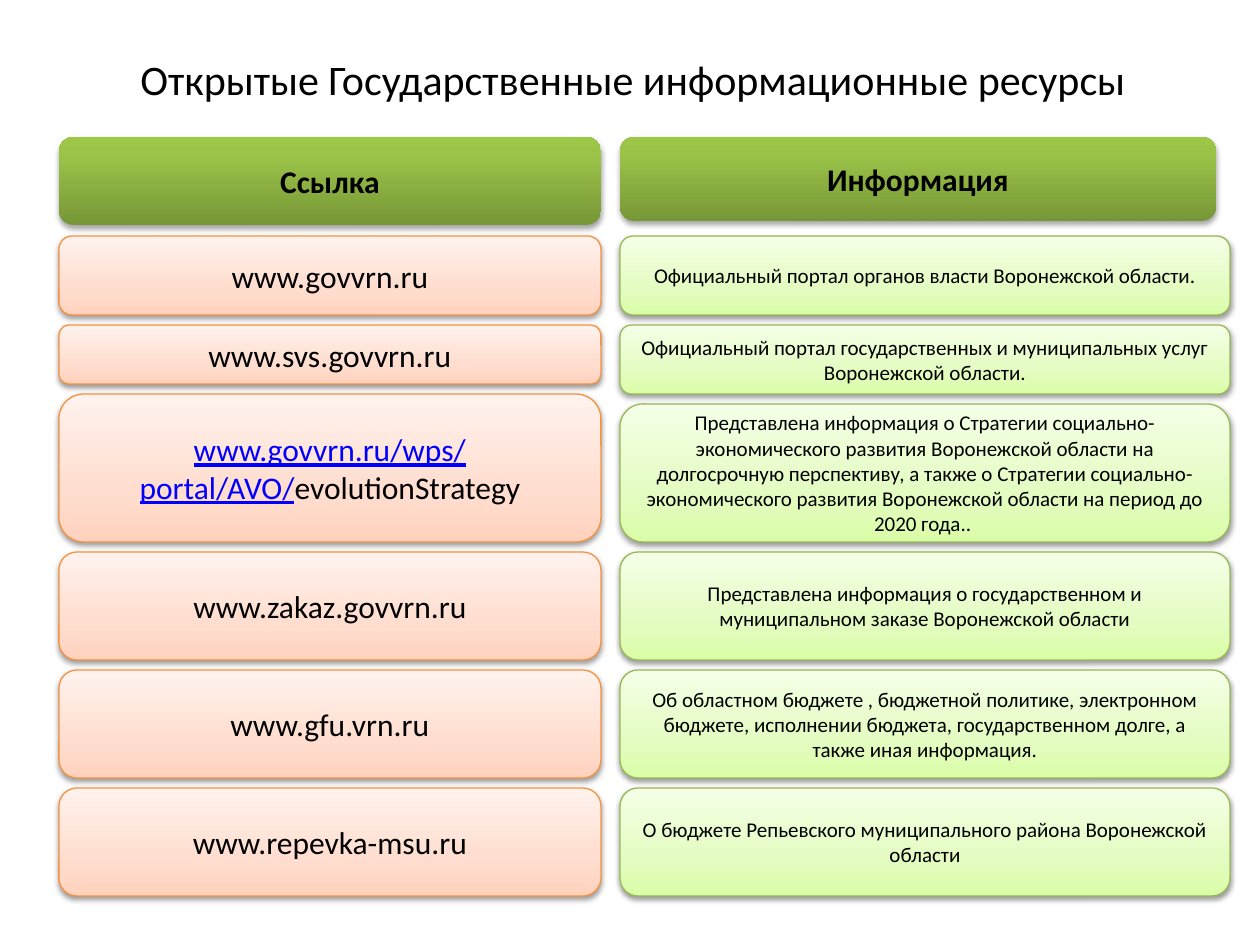
from lxml import etree
from pptx import Presentation
from pptx.dml.color import RGBColor
from pptx.enum.shapes import MSO_SHAPE
from pptx.enum.text import MSO_ANCHOR, PP_ALIGN
from pptx.oxml.ns import qn
from pptx.util import Emu, Pt

ROUNDED = MSO_SHAPE.ROUNDED_RECTANGLE
MIDDLE = MSO_ANCHOR.MIDDLE
CENTER = PP_ALIGN.CENTER

EMU_PER_PX = 914400 / 126
EMU_PER_PT = 12700
BLACK = "000000"
LINK_BLUE = "0000FF"

HEADER = {"stops": [(0, "779737"), (80, "9BC348"), (100, "9DC746")],
          "border": None, "size": 18, "bold": True, "shadow": (35, 1.8)}
LINK = {"stops": [(0, "FFD2BD"), (35, "FFDED0"), (100, "FFF2ED")],
        "border": "F69240", "size": 18, "bold": False, "shadow": (38, 1.6)}
INFO = {"stops": [(0, "DAFDA7"), (35, "E4FCC2"), (100, "F5FFE7")],
        "border": "98B955", "size": 12, "bold": False, "shadow": (38, 1.6)}

LINK_X, LINK_W = 59, 542
INFO_X, INFO_W = 620, 610
HEADER_Y = 137
GAP = 10

ROWS = [
    (79, 79, "www.govvrn.ru",
     "Официальный портал органов власти Воронежской области."),
    (59, 69, "www.svs.govvrn.ru",
     "Официальный портал государственных и муниципальных услуг Воронежской области."),
    (148, 138, "www.govvrn.ru/wps/\nportal/AVO/evolutionStrategy",
     "Представлена информация о Стратегии социально-экономического развития "
     "Воронежской области на долгосрочную перспективу, а также о Стратегии "
     "социально-экономического развития Воронежской области на период до 2020 года.. "),
    (108, 108, "www.zakaz.govvrn.ru",
     "Представлена информация о государственном и муниципальном заказе Воронежской области"),
    (108, 108, "www.gfu.vrn.ru",
     "Об областном бюджете , бюджетной политике, электронном бюджете, исполнении "
     "бюджета, государственном долге, а также иная информация."),
    (108, 108, "www.repevka-msu.ru",
     "О бюджете Репьевского муниципального района Воронежской области"),
]


def px(length):
    return Emu(round(length * EMU_PER_PX))


def color(value):
    return RGBColor.from_string(value)


def add_color(parent, value):
    node = etree.SubElement(parent, qn("a:srgbClr"))
    node.set("val", value)
    return node


class ResourceSlide:
    font_name = "Calibri"

    def __init__(self, slide):
        self.slide = slide

    def style_run(self, run, size, bold=False, ink=BLACK, underline=False):
        run.font.name = self.font_name
        run.font.size = Pt(size)
        run.font.bold = bold
        run.font.underline = underline
        run.font.color.rgb = color(ink)

    def set_text(self, frame, text, size, bold=False):
        frame.word_wrap = True
        frame.vertical_anchor = MIDDLE
        frame.text = text
        for paragraph in frame.paragraphs:
            paragraph.alignment = CENTER
            for run in paragraph.runs:
                self.style_run(run, size, bold)

    def title(self, x, y, width, height, text):
        heading = self.slide.shapes.add_textbox(px(x), px(y), px(width), px(height))
        self.set_text(heading.text_frame, text, 24)

    def gradient(self, card, stops):
        card.fill.gradient()
        card.fill.gradient_angle = 90
        stop_list = card._element.spPr.find(qn("a:gradFill")).find(qn("a:gsLst"))
        for old_stop in list(stop_list):
            stop_list.remove(old_stop)
        for position, value in stops:
            stop = etree.SubElement(stop_list, qn("a:gs"))
            stop.set("pos", str(position * 1000))
            add_color(stop, value)

    def shadow(self, card, opacity, distance):
        card.shadow.inherit = False
        effects = card._element.spPr.find(qn("a:effectLst"))
        outer = etree.SubElement(effects, qn("a:outerShdw"))
        outer.set("blurRad", str(round(3.1 * EMU_PER_PT)))
        outer.set("dist", str(round(distance * EMU_PER_PT)))
        outer.set("dir", "5400000")
        outer.set("rotWithShape", "0")
        alpha = etree.SubElement(add_color(outer, BLACK), qn("a:alpha"))
        alpha.set("val", str(opacity * 1000))

    def card(self, x, y, width, height, text, style):
        card = self.slide.shapes.add_shape(ROUNDED, px(x), px(y), px(width), px(height))
        self.gradient(card, style["stops"])
        if style["border"]:
            card.line.color.rgb = color(style["border"])
            card.line.width = Pt(0.75)
        else:
            card.line.fill.background()
        self.shadow(card, *style["shadow"])
        self.set_text(card.text_frame, text, style["size"], style["bold"])
        return card

    def mark_link(self, card, tail):
        first, last = card.text_frame.paragraphs
        linked = last.runs[0]
        linked.text = linked.text.removesuffix(tail)
        for run in (first.runs[0], linked):
            self.style_run(run, LINK["size"], ink=LINK_BLUE, underline=True)
        plain = last.add_run()
        plain.text = tail
        self.style_run(plain, LINK["size"])


def main():
    presentation = Presentation()
    presentation.slide_width = px(1260)
    presentation.slide_height = px(945)
    page = ResourceSlide(presentation.slides.add_slide(presentation.slide_layouts[6]))

    page.title(69, 38, 1128, 81, "Открытые Государственные информационные ресурсы")
    page.card(INFO_X, HEADER_Y, 596, 84, "Информация", HEADER)
    page.card(LINK_X, HEADER_Y, LINK_W, 88, "Ссылка", HEADER)

    link_y = info_y = 236
    for link_height, info_height, address, description in ROWS:
        link = page.card(LINK_X, link_y, LINK_W, link_height, address, LINK)
        page.card(INFO_X, info_y, INFO_W, info_height, description, INFO)
        if "\n" in address:
            page.mark_link(link, "evolutionStrategy")
        link_y += link_height + GAP
        info_y += info_height + GAP

    presentation.save("out.pptx")


if __name__ == "__main__":
    main()
